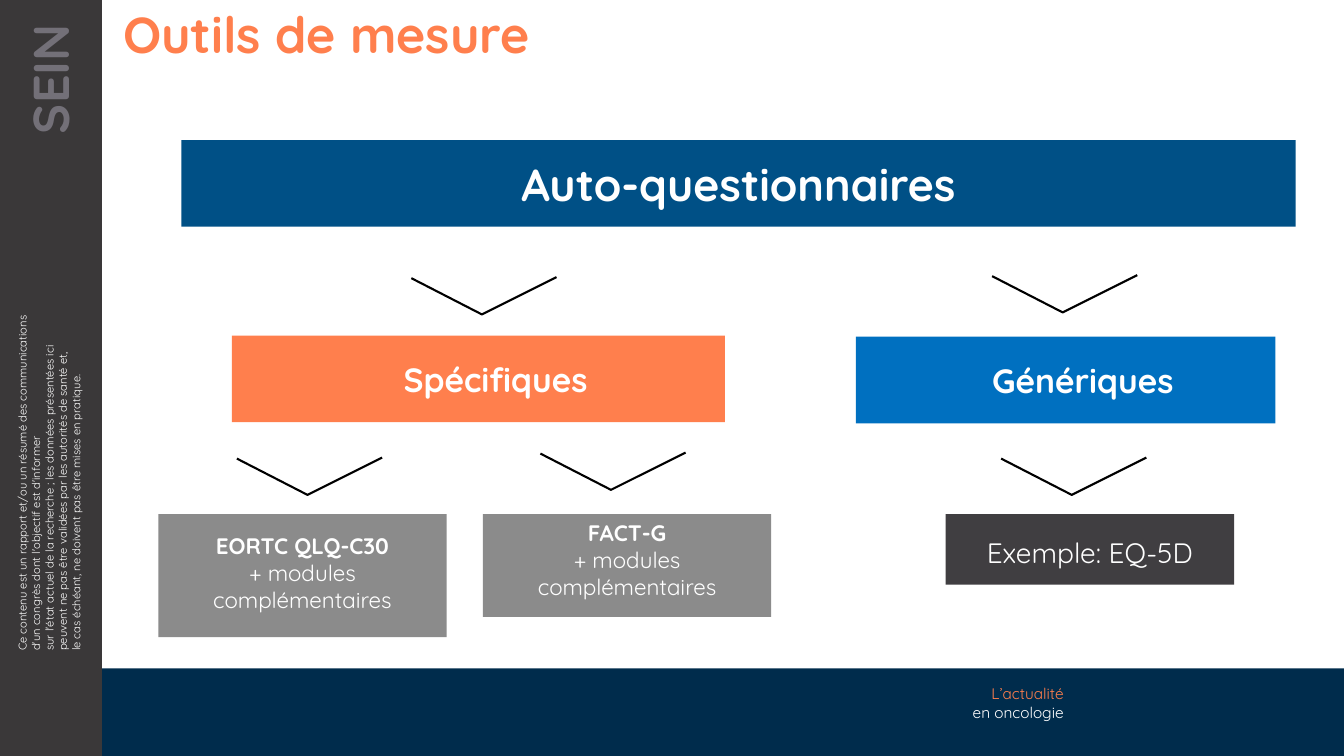
from dataclasses import dataclass

from pptx import Presentation
from pptx.dml.color import RGBColor
from pptx.enum.shapes import MSO_SHAPE
from pptx.enum.text import MSO_ANCHOR, MSO_AUTO_SIZE, PP_ALIGN
from pptx.slide import Slide
from pptx.text.text import TextFrame
from pptx.util import Inches, Pt

RECTANGLE = MSO_SHAPE.RECTANGLE
TOP, MIDDLE = MSO_ANCHOR.TOP, MSO_ANCHOR.MIDDLE
LEFT, CENTER, RIGHT = PP_ALIGN.LEFT, PP_ALIGN.CENTER, PP_ALIGN.RIGHT
FIXED = MSO_AUTO_SIZE.NONE


@dataclass(frozen=True)
class Theme:
    font: str = "Quicksand"
    white: str = "FFFFFF"
    black: str = "000000"
    orange: str = "FF7F4D"
    navy: str = "002C4C"
    deep_blue: str = "005086"
    blue: str = "0070C0"
    charcoal: str = "3A3839"
    dark_gray: str = "403E41"
    gray: str = "8B8B8B"
    label_gray: str = "737078"
    title: int = 36
    banner: int = 32
    category: int = 24
    example: int = 20
    tool: int = 16
    tagline: int = 11
    notice: int = 8


THEME = Theme()


@dataclass(frozen=True)
class Span:
    text: str
    bold: bool = False
    color: str = THEME.white


@dataclass(frozen=True)
class Box:
    left: float
    top: float
    width: float
    height: float
    fill: str
    paragraphs: tuple[Span, ...] = ()
    size: int = THEME.tool
    anchor: MSO_ANCHOR = TOP
    indent: float = 0
    first_spacing: float = 1


@dataclass(frozen=True)
class Label:
    left: float
    top: float
    width: float
    height: float
    paragraphs: tuple[Span, ...]
    size: int
    align: PP_ALIGN = LEFT
    rotation: float = 0
    right_margin: float = 0.1


MODULES = Span("+ modules complémentaires")
TOOL_TOP, TOOL_WIDTH = 5.1, 2.86
CATEGORY_HEIGHT = 0.86
CHEVRON_WIDTH, CHEVRON_TIP, CHEVRON_HEIGHT = 1.44, 0.7, 0.37

FRAME_BOXES = (
    Box(1.01, 6.63, 12.32, 0.87, THEME.navy),
    Box(0, 0, 1.01, 7.5, THEME.charcoal),
)
LABELS = (
    Label(-1.31, 4.37, 3.6, 0.77, (Span(
        "Ce contenu est un rapport et/ou un résumé des communications "
        "d'un congrès dont l'objectif est d'informer\n"
        "sur l'état actuel de la recherche ; les données présentées ici "
        "peuvent ne pas être validées par les autorités de santé et,\n"
        "le cas échéant, ne doivent pas être mises en pratique."),),
        THEME.notice, rotation=270),
    Label(-1.04, 1.18, 3.07, 0.71, (Span("SEIN", True, THEME.label_gray),),
          THEME.title, RIGHT, 270, 0.24),
    Label(9.01, 6.74, 1.64, 0.47,
          (Span("L’actualité", color=THEME.orange), Span("en oncologie")),
          THEME.tagline, RIGHT),
)
DIAGRAM_BOXES = (
    Box(1.8, 1.39, 11.05, CATEGORY_HEIGHT, THEME.deep_blue,
        (Span("Auto-questionnaires", True),), THEME.banner, MIDDLE),
    Box(2.3, 3.33, 4.89, CATEGORY_HEIGHT, THEME.orange,
        (Span("Spécifiques", True),), THEME.category, MIDDLE, 0.34),
    Box(8.49, 3.34, 4.16, CATEGORY_HEIGHT, THEME.blue,
        (Span("Génériques", True),), THEME.category, MIDDLE, 0.34),
    Box(1.57, TOOL_TOP, TOOL_WIDTH, 1.22, THEME.gray,
        (Span("EORTC QLQ-C30", True), MODULES), first_spacing=1.5),
    Box(4.79, TOOL_TOP, TOOL_WIDTH, 1.02, THEME.gray,
        (Span("FACT-G", True), MODULES)),
    Box(9.38, TOOL_TOP, TOOL_WIDTH, 0.7, THEME.dark_gray,
        (Span("Exemple: EQ-5D"),), THEME.example, first_spacing=1.5),
)
CHEVRONS = ((4.08, 2.75), (9.84, 2.73), (2.35, 4.54), (5.36, 4.49), (9.93, 4.54))


def write_text(frame: TextFrame, paragraphs: tuple[Span, ...], *, size: int,
               align: PP_ALIGN = LEFT, anchor: MSO_ANCHOR = TOP,
               indent: float = 0, first_spacing: float = 1,
               left_margin: float = 0.1, right_margin: float = 0.1) -> None:
    frame.word_wrap = True
    frame.auto_size = FIXED
    frame.vertical_anchor = anchor
    frame.margin_left, frame.margin_right = Inches(left_margin), Inches(right_margin)
    frame.margin_top = frame.margin_bottom = Inches(0.05)
    for index, span in enumerate(paragraphs):
        para = frame.add_paragraph() if index else frame.paragraphs[0]
        para.alignment = align
        para.space_before = Pt(0)
        para.line_spacing = 1.0 if index else first_spacing
        if indent:
            properties = para._p.get_or_add_pPr()
            properties.set("marL", str(Inches(indent)))
            properties.set("indent", "0")
        for position, line in enumerate(span.text.split("\n")):
            if position:
                para.add_line_break()
            run = para.add_run()
            run.text = line
            run.font.name = THEME.font
            run.font.size = Pt(size)
            run.font.bold = span.bold
            run.font.color.rgb = RGBColor.from_string(span.color)


def draw_box(page: Slide, box: Box) -> None:
    shape = page.shapes.add_shape(RECTANGLE, Inches(box.left), Inches(box.top),
                                  Inches(box.width), Inches(box.height))
    shape.shadow.inherit = False
    shape.fill.solid()
    shape.fill.fore_color.rgb = RGBColor.from_string(box.fill)
    shape.line.fill.background()
    write_text(shape.text_frame, box.paragraphs, size=box.size, align=CENTER,
               anchor=box.anchor, indent=box.indent, first_spacing=box.first_spacing)


def draw_label(page: Slide, label: Label) -> None:
    shape = page.shapes.add_textbox(Inches(label.left), Inches(label.top),
                                    Inches(label.width), Inches(label.height))
    shape.rotation = label.rotation
    write_text(shape.text_frame, label.paragraphs, size=label.size,
               align=label.align, right_margin=label.right_margin)


def draw_chevron(page: Slide, left: float, top: float) -> None:
    builder = page.shapes.build_freeform(Inches(left + CHEVRON_WIDTH), Inches(top))
    builder.add_line_segments(
        ((Inches(left + CHEVRON_TIP), Inches(top + CHEVRON_HEIGHT)),
         (Inches(left), Inches(top + 0.01))), close=False)
    chevron = builder.convert_to_shape()
    chevron.shadow.inherit = False
    chevron.fill.solid()
    chevron.fill.fore_color.rgb = RGBColor.from_string(THEME.white)
    chevron.line.color.rgb = RGBColor.from_string(THEME.black)
    chevron.line.width = Pt(1.5)


def place_title(page: Slide) -> None:
    title = page.shapes.title
    title.left, title.top = Inches(1.02), Inches(0.05)
    title.width, title.height = Inches(12.31), Inches(0.57)
    write_text(title.text_frame, (Span("Outils de mesure", True, THEME.orange),),
               size=THEME.title, first_spacing=0.9, left_margin=0.2)


def main() -> None:
    deck = Presentation()
    deck.slide_width, deck.slide_height = Inches(13.33), Inches(7.5)
    page = deck.slides.add_slide(deck.slide_layouts[5])
    place_title(page)
    for box in FRAME_BOXES:
        draw_box(page, box)
    for label in LABELS:
        draw_label(page, label)
    for box in DIAGRAM_BOXES:
        draw_box(page, box)
    for left, top in CHEVRONS:
        draw_chevron(page, left, top)
    deck.save("out.pptx")


if __name__ == "__main__":
    main()
